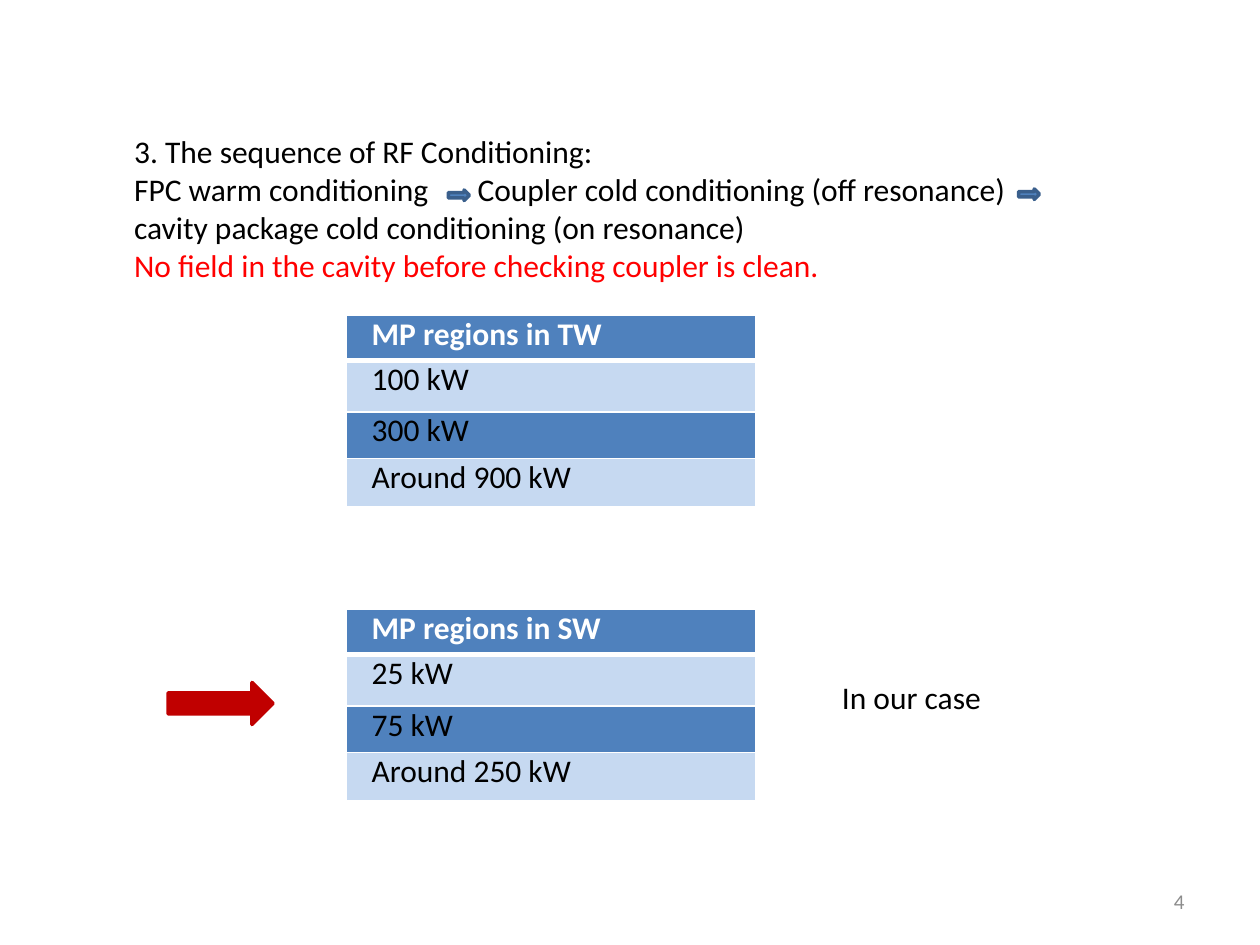
import pptx
import pptx.util
import pptx.dml.color
import pptx.enum.shapes
import pptx.enum.text
import pptx.oxml
import pptx.oxml.ns
from lxml import etree

RGB = pptx.dml.color.RGBColor
BLACK = RGB(0, 0, 0)
WHITE = RGB(255, 255, 255)
RED = RGB(255, 0, 0)
GRAY = RGB(0x8C, 0x8C, 0x8C)
BLUE = RGB(0x4F, 0x81, 0xBD)
NAVY = RGB(0x3A, 0x5F, 0x8C)
PALE = RGB(0xC6, 0xD9, 0xF1)
BRICK = RGB(0xC0, 0, 0)

UNIT = pptx.util.Inches(10) // 120
ROWS = (4.32, 4.92, 4.44, 4.56)
ALIGN = pptx.enum.text.PP_ALIGN
ANCHOR = pptx.enum.text.MSO_ANCHOR
qn = pptx.oxml.ns.qn


def grid(*box):
    return [round(part * UNIT) for part in box]


def write(para, text, size=18, color=BLACK, bold=False, align=ALIGN.LEFT,
          space=0, indent=0, tab=None):
    run = para.add_run()
    run.text = text
    font = run.font
    font.name = "Calibri"
    font.size = pptx.util.Pt(size)
    font.bold = bold
    font.color.rgb = color
    para.alignment = align
    para.space_before = para.space_after = pptx.util.Pt(space)
    props = para._p.get_or_add_pPr()
    if indent:
        props.set("marL", "0")
        props.set("indent", str(pptx.util.Inches(indent)))
    if tab:
        stops = etree.SubElement(props, qn("a:tabLst"))
        etree.SubElement(stops, qn("a:tab"), pos=str(grid(tab)[0]), algn="l")


def add_text(slide, box, lines, anchor=ANCHOR.TOP):
    frame = slide.shapes.add_textbox(*grid(*box)).text_frame
    frame.word_wrap = True
    frame.vertical_anchor = anchor
    for i, (text, style) in enumerate(lines):
        para = frame.add_paragraph() if i else frame.paragraphs[0]
        write(para, text, **style)


def add_arrow(slide, box, fill, edge):
    kind = pptx.enum.shapes.MSO_SHAPE.RIGHT_ARROW
    arrow = slide.shapes.add_shape(kind, *grid(*box))
    arrow.shadow.inherit = False
    arrow.fill.solid()
    arrow.fill.fore_color.rgb = fill
    arrow.line.color.rgb = edge
    arrow.line.width = pptx.util.Pt(2)


def add_edge(cell, side, width):
    props = cell._tc.get_or_add_tcPr()
    edge = etree.SubElement(props, qn("a:ln" + side),
                            w=str(pptx.util.Pt(width)))
    fill = etree.SubElement(edge, qn("a:solidFill"))
    etree.SubElement(fill, qn("a:srgbClr"), val=str(WHITE))


def add_steps(slide, box):
    left, top, width, height = box
    add_text(slide, box, [
        ("3. The sequence of RF Conditioning:", {}),
        ("FPC warm conditioning\tCoupler cold conditioning (off resonance)",
         {"tab": 32.7}),
        ("cavity package cold conditioning (on resonance)", {}),
        ("No field in the cavity before checking coupler is clean.",
         {"color": RED}),
    ])
    for shift, drop in ((31.1, 6.1), (85.4, 6)):
        add_arrow(slide, (left + shift, top + drop, 2, 1), BLUE, NAVY)


def add_list(slide, box, words):
    table = slide.shapes.add_table(len(words), 1, *grid(*box)).table
    for i, text in enumerate(words):
        table.rows[i].height = grid(ROWS[i])[0]
        cell = table.cell(i, 0)
        cell.margin_left = cell.margin_right = pptx.util.Inches(0.07)
        cell.margin_top = cell.margin_bottom = 0
        for side in "LRTB":
            heavy = (i, side) in ((0, "B"), (1, "T"))
            add_edge(cell, side, 3 if heavy else 1)
        cell.fill.solid()
        cell.fill.fore_color.rgb = PALE if i % 2 else BLUE
        head = i == 0
        write(cell.text_frame.paragraphs[0], text, bold=head,
              color=WHITE if head else BLACK, space=1, indent=0.13)


def add_case(slide, box):
    left, top, width, height = box
    add_arrow(slide, (left, top + 1, 10, 4), BRICK, BRICK)
    add_list(slide, (left + 17, top - 6, 39, sum(ROWS)),
             ("MP regions in SW", "25 kW", "75 kW", "Around 250 kW"))
    add_text(slide, (left + 63, top, 27, 4.8), [("In our case", {})])


def main():
    deck = pptx.Presentation()
    deck.slide_width, deck.slide_height = grid(120, 90)
    slide = deck.slides.add_slide(deck.slide_layouts[6])
    add_text(slide, (86, 83.4, 28, 4.8),
             [("4", {"size": 12, "color": GRAY, "align": ALIGN.RIGHT})],
             ANCHOR.MIDDLE)
    add_steps(slide, (11.6, 12, 89, 15.7))
    add_list(slide, (33, 30, 39, sum(ROWS)),
             ("MP regions in TW", "100 kW", "300 kW", "Around 900 kW"))
    add_case(slide, (16, 64, 90, 6))
    deck.save("out.pptx")


if __name__ == "__main__":
    main()
